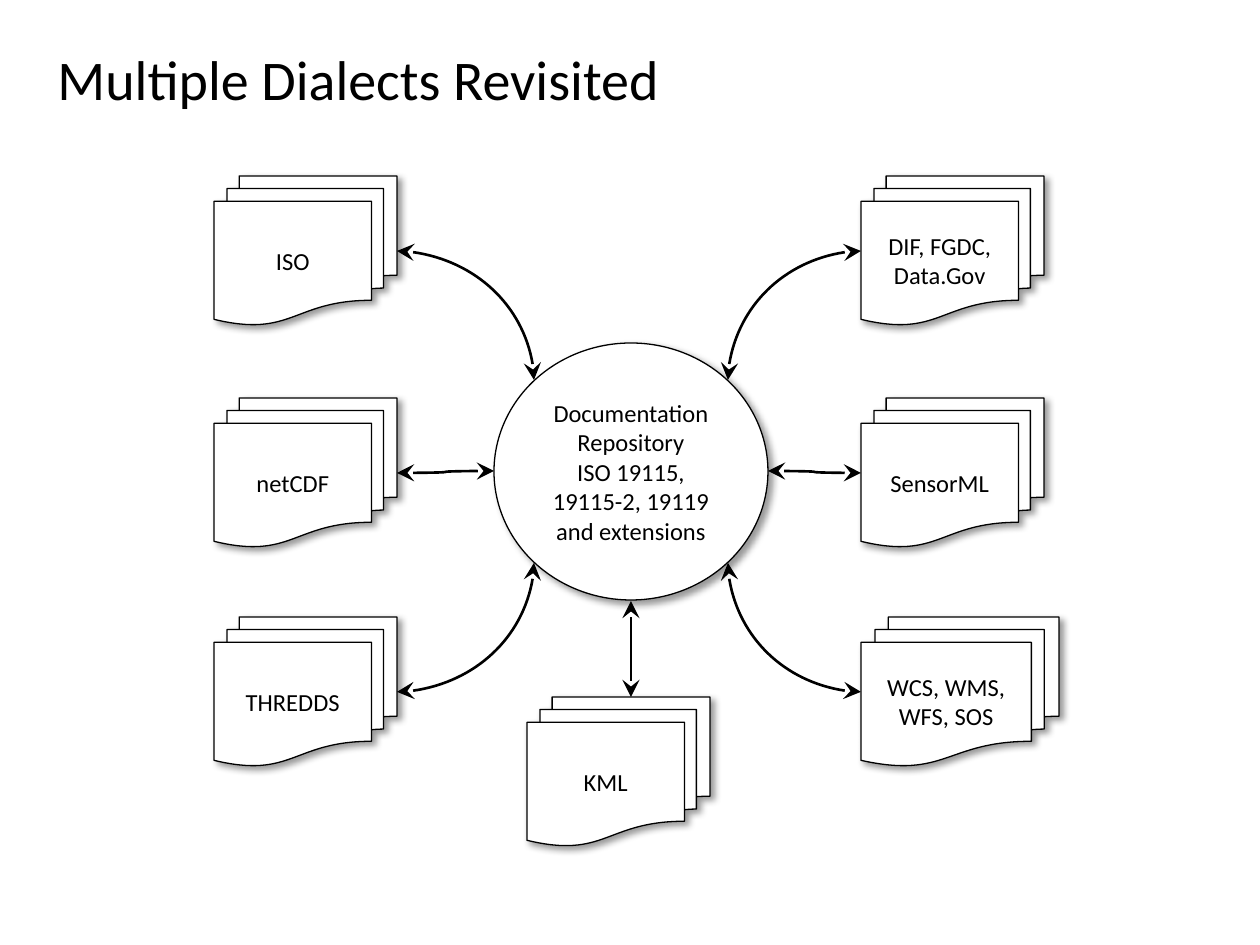
from lxml import etree
from pptx import Presentation
from pptx import util as u
from pptx.dml.color import RGBColor
from pptx.enum import shapes, text
from pptx.oxml.ns import qn

PX = 914400 // 126
INK, PAPER = "000000", "FFFFFF"

deck = Presentation()
deck.slide_width, deck.slide_height = u.Inches(10), u.Inches(7.5)
slide = deck.slides.add_slide(deck.slide_layouts[6])


def write(shape, words, size, align):
    """Fill the shape with one paragraph per line of words."""
    frame = shape.text_frame
    frame.word_wrap = True
    frame.vertical_anchor = text.MSO_ANCHOR.MIDDLE
    frame.text = words
    for para in frame.paragraphs:
        para.alignment = align
        para.font.name, para.font.size = "Calibri", u.Pt(size)
        para.font.color.rgb = RGBColor.from_string(INK)


def node(kind, box, words):
    """Add a white outlined shape with a soft shadow and centred text."""
    shape = slide.shapes.add_shape(kind, *[n * PX for n in box])
    shape.fill.solid()
    shape.fill.fore_color.rgb = RGBColor.from_string(PAPER)
    shape.line.color.rgb = RGBColor.from_string(INK)
    shape.line.width = u.Pt(0.75)
    shape.shadow.inherit = False
    effects = shape._element.spPr.find(qn("a:effectLst"))
    shade = etree.SubElement(effects, qn("a:outerShdw"), blurRad=str(u.Pt(4)),
                             dist=str(u.Pt(3)), dir="2700000", algn="tl", rotWithShape="0")
    tint = etree.SubElement(shade, qn("a:srgbClr"), val=INK)
    etree.SubElement(tint, qn("a:alpha"), val="40000")
    write(shape, words, 14, text.PP_ALIGN.CENTER)


title = slide.shapes.add_textbox(45 * PX, 38 * PX, 939 * PX, 81 * PX)
write(title, "Multiple Dialects Revisited", 32, text.PP_ALIGN.LEFT)

node(shapes.MSO_SHAPE.OVAL, (494, 343, 274, 257),
     "Documentation\nRepository\nISO 19115, 19115-2, 19119 and extensions")

# Stacks of documents around the repository
left, right, wide, high = 214, 861, 183, 149
rows = [176, 398, 617]
stacks = [
    (left, rows[0], wide, "ISO"),
    (left, rows[1], wide, "netCDF"),
    (left, rows[2], wide, "THREDDS"),
    (right, rows[0], wide, "DIF, FGDC,\nData.Gov"),
    (right, rows[1], wide, "SensorML"),
    (right, rows[2], 198, "WCS, WMS, WFS, SOS"),
    (527, 697, wide, "KML"),
]
for x, y, w, words in stacks:
    node(shapes.MSO_SHAPE.FLOWCHART_MULTIDOCUMENT, (x, y, w, high), words)

# Two-way arrows: bends leave a stack sideways and meet the circle upright
arrows = [("straightConnector1", 631, 697, 631, 601)]
for edge, bend, side in [(left + wide, 534, 494), (right, 728, 768)]:
    arrows += [
        ("curvedConnector2", edge, 251, bend, 380),
        ("curvedConnector3", edge, 473, side, 471),
        ("curvedConnector2", edge, 692, bend, 563),
    ]
for form, *ends in arrows:
    link = slide.shapes.add_connector(shapes.MSO_CONNECTOR.CURVE, *[n * PX for n in ends])
    link.line.color.rgb = RGBColor.from_string(INK)
    link.line.width = u.Pt(1.5)
    props = link._element.spPr
    props.find(qn("a:prstGeom")).set("prst", form)
    for tip in ("a:headEnd", "a:tailEnd"):
        etree.SubElement(props.find(qn("a:ln")), qn(tip), type="stealth", w="lg", len="lg")
    etree.SubElement(props, qn("a:effectLst"))

deck.save("out.pptx")
